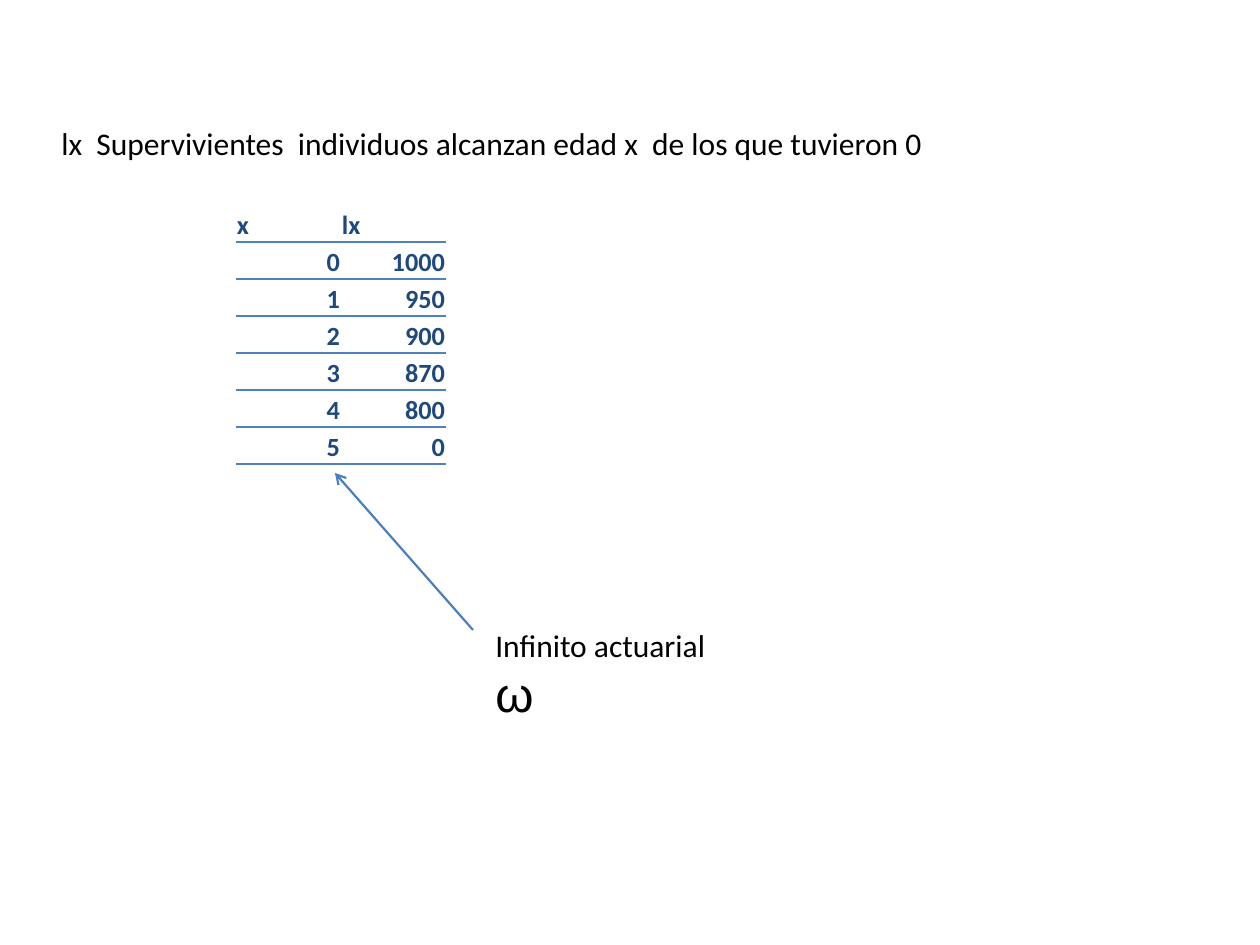
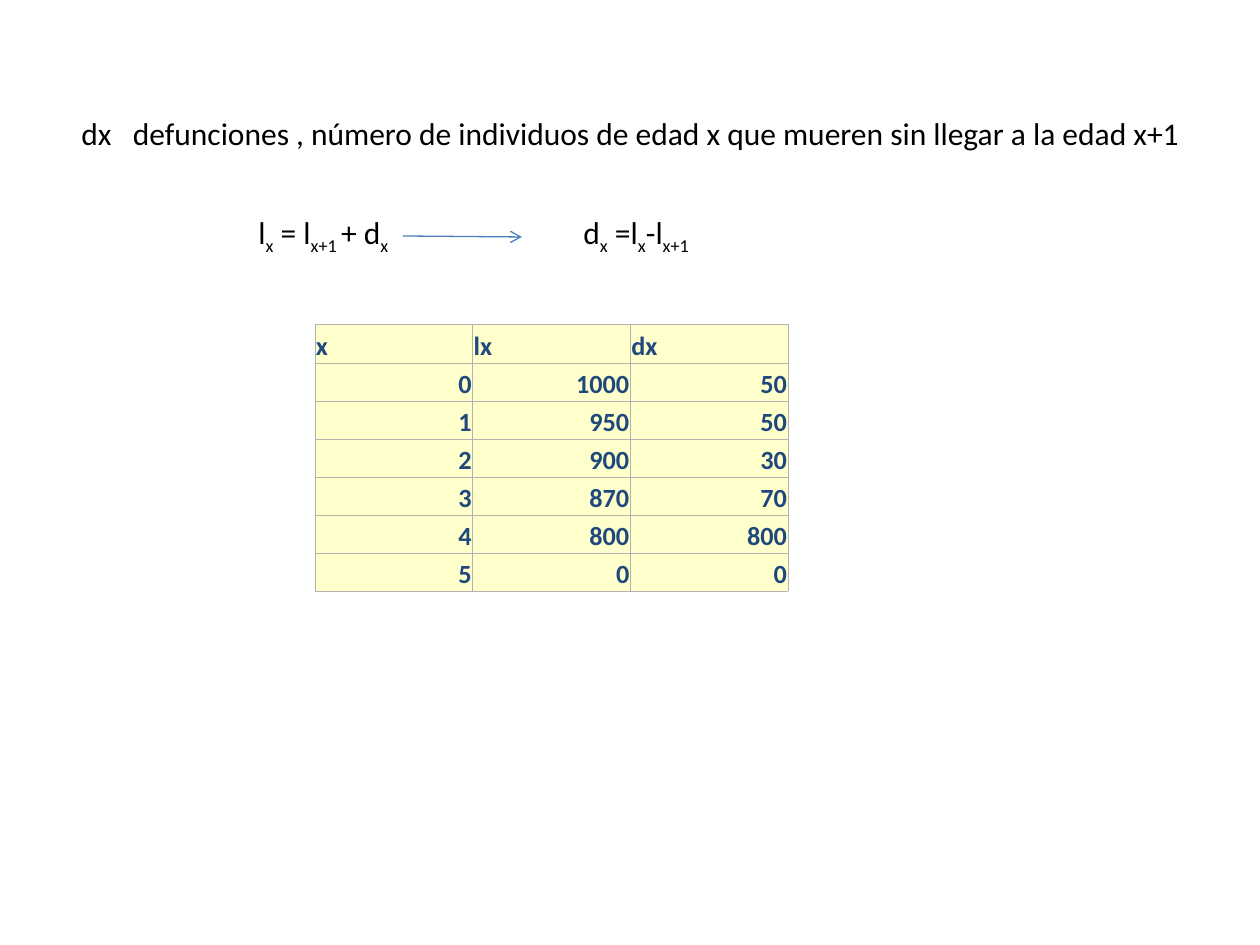
"""Build two slides on survivors and deaths in a life table."""
import dataclasses

import lxml.etree
import pptx
import pptx.dml.color
import pptx.enum.shapes
import pptx.enum.text
import pptx.oxml.ns
import pptx.util


@dataclasses.dataclass(frozen=True)
class Theme:
    font: str = "Calibri"
    symbol_font: str = "Arial"
    text: str = "000000"
    table_text: str = "1F497D"
    rule: str = "4F81BD"
    grid: str = "B2B2B2"
    cell: str = "FFFFCC"
    arrow: str = "4B7EBC"
    body_size: int = 18
    table_size: int = 15
    symbol_size: int = 28
    no_table_style: str = "{2D5ABB26-0587-4C30-8999-92F81FD0307C}"


def px(n):
    return pptx.util.Emu(round(n * 914400 / 126))


def rgb(color):
    return pptx.dml.color.RGBColor.from_string(color)


def add_xml(parent, tag, **attrs):
    return lxml.etree.SubElement(parent, pptx.oxml.ns.qn(tag), attrs)


class Deck:
    def __init__(self, theme):
        self.theme = theme
        self.prs = pptx.Presentation()
        self.prs.slide_width, self.prs.slide_height = px(1260), px(945)
        self.s = None

    def slide(self):
        self.s = self.prs.slides.add_slide(self.prs.slide_layouts[6])

    def style(self, r, size, color, font=None, bold=False):
        r.font.name = font or self.theme.font
        r.font.size = pptx.util.Pt(size)
        r.font.color.rgb = rgb(color)
        r.font.bold = bold

    def text(self, left, top, width, height, text):
        tf = self.s.shapes.add_textbox(px(left), px(top), px(width), px(height)).text_frame
        tf.word_wrap = True
        tf.auto_size = pptx.enum.text.MSO_AUTO_SIZE.SHAPE_TO_FIT_TEXT
        tf.text = text
        for p in tf.paragraphs:
            for r in p.runs:
                self.style(r, self.theme.body_size, self.theme.text)
        return tf

    def formula(self, left, top, width, height, parts):
        p = self.text(left, top, width, height, "").paragraphs[0]
        for i, part in enumerate(parts.split("|")):
            r = p.add_run()
            r.text = part
            self.style(r, self.theme.body_size, self.theme.text)
            if i % 2:
                r.font._element.set("baseline", "-25000")

    def arrow(self, x1, y1, x2, y2, width):
        sp = self.s.shapes.add_connector(
            pptx.enum.shapes.MSO_CONNECTOR.STRAIGHT, px(x1), px(y1), px(x2), px(y2))
        sp.line.color.rgb = rgb(self.theme.arrow)
        sp.line.width = pptx.util.Pt(width)
        add_xml(sp.line._get_or_add_ln(), "a:tailEnd", type="arrow")
        add_xml(sp._element.spPr, "a:effectLst")

    def border(self, cell, sides, color, width):
        for side in sides:
            ln = add_xml(cell._tc.get_or_add_tcPr(), f"a:ln{side}", w=str(pptx.util.Pt(width)))
            add_xml(add_xml(ln, "a:solidFill"), "a:srgbClr", val=color)

    def table(self, left, top, width, header, row, rows, sides, color, line, fill=None):
        height = header + row * (len(rows) - 1)
        table = self.s.shapes.add_table(
            len(rows), len(rows[0]), px(left), px(top), px(width), px(height)).table
        table._tbl.tblPr[0].text = self.theme.no_table_style
        table.first_row = table.horz_banding = False
        for col in table.columns:
            col.width = px(width / len(rows[0]))
        for i, values in enumerate(rows):
            table.rows[i].height = px(row if i else header)
            for j, value in enumerate(values):
                cell = table.cell(i, j)
                cell.margin_left = cell.margin_right = cell.margin_top = px(1)
                cell.margin_bottom = 0
                cell.vertical_anchor = pptx.enum.text.MSO_ANCHOR.BOTTOM
                self.border(cell, sides, color, line)
                if fill:
                    cell.fill.solid()
                    cell.fill.fore_color.rgb = rgb(fill)
                else:
                    cell.fill.background()
                p = cell.text_frame.paragraphs[0]
                p.text = str(value)
                if i:
                    p.alignment = pptx.enum.text.PP_ALIGN.RIGHT
                self.style(p.runs[0], self.theme.table_size, self.theme.table_text, bold=True)


def main():
    theme = Theme()
    deck = Deck(theme)
    survivors = [1000, 950, 900, 870, 800, 0]
    deaths = [50, 50, 30, 70, 800, 0]

    deck.slide()
    deck.text(49, 118, 906, 50, "lx  Supervivientes  individuos alcanzan edad x  de los que tuvieron 0")
    deck.table(236, 207, 210, 35, 37, [("x", "lx"), *enumerate(survivors)],
               "B", theme.rule, 1.5)
    deck.arrow(473, 630, 335, 473, 1.25)
    tf = deck.text(483, 620, 301, 72, "Infinito actuarial\nω")
    deck.style(tf.paragraphs[1].runs[0], theme.symbol_size, theme.text, theme.symbol_font)

    deck.slide()
    deck.text(69, 108, 1139, 50,
              "dx   defunciones , número de individuos de edad x que mueren sin llegar a la edad x+1")
    deck.formula(246, 207, 325, 50, "l|x| = l|x+1 |+ d|x")
    deck.arrow(403, 236, 522, 237, 0.75)
    deck.formula(571, 207, 139, 50, "d|x| =l|x|-l|x+1")
    deck.table(315, 324, 473, 39, 38,
               [("x", "lx", "dx"), *zip(range(len(deaths)), survivors, deaths)],
               "LRTB", theme.grid, 0.5, theme.cell)

    deck.prs.save("out.pptx")


if __name__ == "__main__":
    main()
